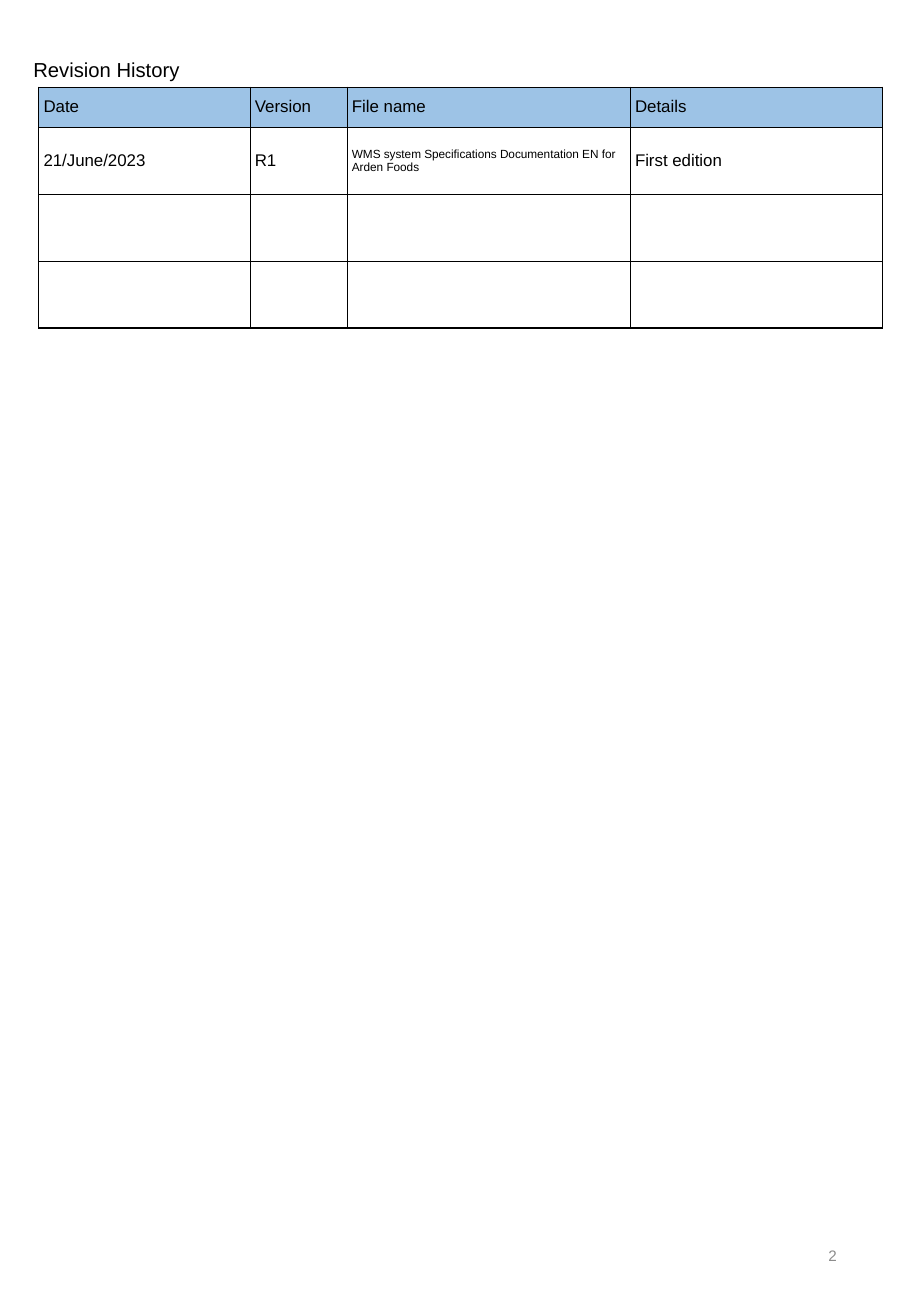
from dataclasses import dataclass

from lxml.etree import SubElement
from pptx import Presentation
from pptx.dml.color import RGBColor as Rgb
from pptx.enum.text import MSO_ANCHOR as Anchor, PP_ALIGN as Align
from pptx.oxml.ns import qn
from pptx.slide import Slide
from pptx.table import _Cell as Cell
from pptx.text.text import TextFrame
from pptx.util import Cm, Pt


@dataclass(frozen=True)
class Theme:
    font: str = "Arial"
    ink: str = "000000"
    muted: str = "8C8C8C"
    header: str = "9DC3E6"
    title_size: float = 12
    body_size: float = 10
    page_size: float = 9
    small_size: float = 7
    border: float = 0.75


@dataclass(frozen=True)
class Column:
    heading: str
    width: float
    size: float


@dataclass(frozen=True)
class Label:
    text: str
    left: float
    top: float
    width: float
    height: float
    size: float
    color: str
    align: Align = Align.LEFT
    indent: float = 0


THEME = Theme()

COLUMNS = [
    Column("Date", 4.42, THEME.body_size),
    Column("Version", 2.03, THEME.body_size),
    Column("File name", 5.92, THEME.small_size),
    Column("Details", 5.28, THEME.body_size),
]
REVISIONS = [
    ("21/June/2023", "R1",
     "WMS system Specifications Documentation EN for Arden Foods", "First edition"),
    ("", "", "", ""),
    ("", "", "", ""),
]
LABELS = [
    Label("Revision History", 0.3, 1.07, 3.96, 0.76,
          THEME.title_size, THEME.ink, indent=0.15),
    Label("2", 13.46, 25.5, 4.29, 1.47,
          THEME.page_size, THEME.muted, align=Align.RIGHT),
]
TABLE_LEFT, TABLE_TOP = 0.81, 1.82
HEADER_HEIGHT, ROW_HEIGHT = 0.84, 1.4


def write(frame: TextFrame, text: str, *, size: float, color: str = THEME.ink,
          align: Align = Align.LEFT, indent: float = 0) -> None:
    """Put one formatted paragraph into a text frame."""
    para = frame.paragraphs[0]
    para.alignment = align
    if indent:
        para._p.get_or_add_pPr().set("indent", str(Cm(indent)))
    span = para.add_run()
    span.text = text
    span.font.name = THEME.font
    span.font.size = Pt(size)
    span.font.color.rgb = Rgb.from_string(color)


def add_label(page: Slide, label: Label) -> None:
    box = page.shapes.add_textbox(Cm(label.left), Cm(label.top),
                                  Cm(label.width), Cm(label.height))
    frame = box.text_frame
    frame.word_wrap = True
    frame.vertical_anchor = Anchor.MIDDLE
    write(frame, label.text, size=label.size, color=label.color,
          align=label.align, indent=label.indent)


def add_borders(cell: Cell) -> None:
    properties = cell._tc.get_or_add_tcPr()
    for side in ("a:lnL", "a:lnR", "a:lnT", "a:lnB"):
        line = SubElement(properties, qn(side), w=str(Pt(THEME.border)))
        fill = SubElement(line, qn("a:solidFill"))
        SubElement(fill, qn("a:srgbClr"), val=THEME.ink)


def fill_cell(cell: Cell, text: str, size: float, is_header: bool) -> None:
    cell.vertical_anchor = Anchor.MIDDLE
    cell.margin_left, cell.margin_right = Cm(0.1), Cm(0.25)
    cell.margin_top = cell.margin_bottom = Cm(0.13)
    add_borders(cell)
    if is_header:
        cell.fill.solid()
        cell.fill.fore_color.rgb = Rgb.from_string(THEME.header)
    else:
        cell.fill.background()
    if text:
        write(cell.text_frame, text, size=size)


def add_history(page: Slide) -> None:
    rows = [tuple(column.heading for column in COLUMNS), *REVISIONS]
    heights = [HEADER_HEIGHT] + [ROW_HEIGHT] * len(REVISIONS)
    width = sum(column.width for column in COLUMNS)
    table = page.shapes.add_table(len(rows), len(COLUMNS), Cm(TABLE_LEFT), Cm(TABLE_TOP),
                                  Cm(width), Cm(sum(heights))).table
    table.first_row = table.horz_banding = False
    for index, column in enumerate(COLUMNS):
        table.columns[index].width = Cm(column.width)
    for row, (texts, height) in enumerate(zip(rows, heights)):
        table.rows[row].height = Cm(height)
        is_header = row == 0
        for index, (text, column) in enumerate(zip(texts, COLUMNS)):
            size = THEME.body_size if is_header else column.size
            fill_cell(table.cell(row, index), text, size, is_header)


def main() -> None:
    deck = Presentation()
    deck.slide_width, deck.slide_height = Cm(19.05), Cm(27.51)
    page = deck.slides.add_slide(deck.slide_layouts[6])

    # Revision table
    add_history(page)

    # Heading and page number
    for label in LABELS:
        add_label(page, label)

    deck.save("out.pptx")


if __name__ == "__main__":
    main()
